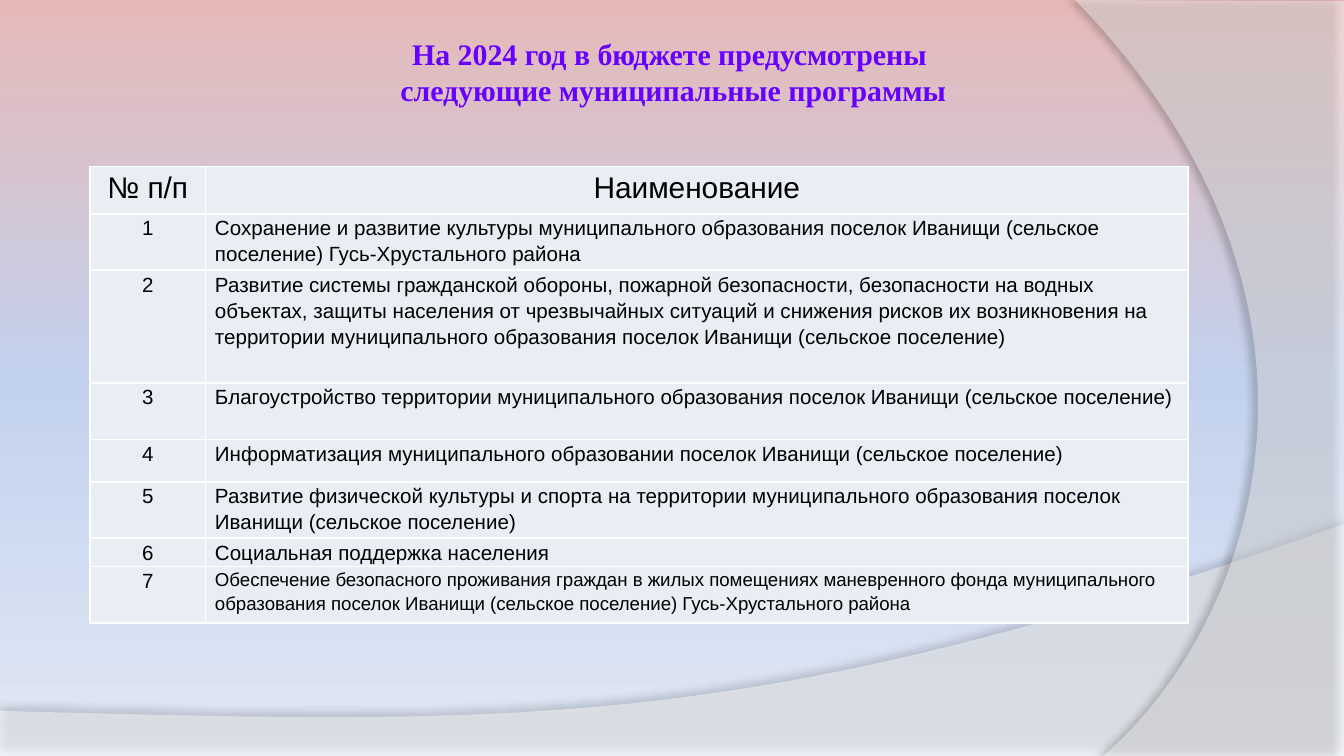
import copy

import lxml.etree
import pptx
import pptx.dml.color
import pptx.enum.text
import pptx.oxml.ns
import pptx.util

WIDTH = 10
HEIGHT = WIDTH * 9 / 16
ROW_UNIT = 0.21
COLUMN_WIDTHS = [0.86, 7.31]
HEADER = ("№ п/п", "Наименование")
# Name of the programme, row height in units, text size
PROGRAMMES = [
    ("Сохранение и развитие культуры муниципального образования поселок Иванищи "
     "(сельское поселение) Гусь-Хрустального района", 2, 11),
    ("Развитие системы гражданской обороны, пожарной безопасности, безопасности на водных "
     "объектах, защиты населения от чрезвычайных ситуаций и снижения рисков их возникновения "
     "на территории муниципального образования поселок Иванищи (сельское поселение)", 4, 11),
    ("Благоустройство территории муниципального образования поселок Иванищи "
     "(сельское поселение)", 2, 11),
    ("Информатизация муниципального образовании поселок Иванищи (сельское поселение)", 1.5, 11),
    ("Развитие физической культуры и спорта на территории муниципального образования поселок "
     "Иванищи (сельское поселение)", 2, 11),
    ("Социальная поддержка населения", 1, 11),
    ("Обеспечение безопасного проживания граждан в жилых помещениях маневренного фонда "
     "муниципального образования поселок Иванищи (сельское поселение) "
     "Гусь-Хрустального района", 2, 10),
]
# Corners before the curve, its two control points and end, opacity,
# then shadow opacity, distance and direction
WAVES = [
    ([(0, 5.29), (0, HEIGHT), (WIDTH, HEIGHT), (WIDTH, 3.9)],
     [(5.59, 5.47), (3.91, 5.39), (0, 5.29)], 45, (35, 3.5, 270)),
    ([(WIDTH, 0.01), (WIDTH, HEIGHT), (8.21, HEIGHT)],
     [(9.35, 4.64), (10.18, 2.25), (8, 0)], 40, (45, 4, 180)),
]
CURVE_STEPS = 60


def color(hex_string):
    return pptx.dml.color.RGBColor.from_string(hex_string)


def add_element(parent, tag, **attributes):
    element = lxml.etree.SubElement(parent, pptx.oxml.ns.qn(tag))
    for name, value in attributes.items():
        element.set(name, str(value))
    return element


presentation = pptx.Presentation()
presentation.slide_width = pptx.util.Inches(WIDTH)
presentation.slide_height = pptx.util.Inches(HEIGHT)
slide = presentation.slides.add_slide(presentation.slide_layouts[5])

# Background
background = slide.background.fill
background.gradient()
background.gradient_angle = 270
stop_list = slide.element.find(".//" + pptx.oxml.ns.qn("a:gsLst"))
stop_list.append(copy.deepcopy(stop_list[0]))
for stop, position, shade in zip(background.gradient_stops, (0, 0.5, 1),
                                 ("E6B9B8", "C2D1ED", "E1E8F5")):
    stop.position = position
    stop.color.rgb = color(shade)

# Waves, behind the title
title = slide.shapes.title
for corners, curve, opacity, (shadow_opacity, distance, direction) in WAVES:
    controls = [corners[-1], *curve]
    outline = list(corners)
    for step in range(1, CURVE_STEPS + 1):
        t = step / CURVE_STEPS
        weights = ((1 - t) ** 3, 3 * t * (1 - t) ** 2, 3 * t ** 2 * (1 - t), t ** 3)
        outline.append(tuple(sum(weight * point[axis] for weight, point in
                                 zip(weights, controls)) for axis in (0, 1)))
    # The builder keeps whole numbers only, so the outline is given in EMU
    outline = [(pptx.util.Inches(x), pptx.util.Inches(y)) for x, y in outline]
    builder = slide.shapes.build_freeform(*outline[0])
    builder.add_line_segments(outline[1:], close=True)
    wave = builder.convert_to_shape()
    wave.fill.solid()
    wave.fill.fore_color.rgb = color("FFFFFF")
    wave.line.fill.background()
    wave.shadow.inherit = False
    properties = wave.element.spPr
    fill_color = properties.find(".//" + pptx.oxml.ns.qn("a:srgbClr"))
    add_element(fill_color, "a:alpha", val=opacity * 1000)
    effects = properties.find(pptx.oxml.ns.qn("a:effectLst"))
    shadow = add_element(effects, "a:outerShdw", blurRad=pptx.util.Pt(4),
                         dist=pptx.util.Pt(distance), dir=direction * 60000,
                         algn="ctr", rotWithShape=0)
    shadow_color = add_element(shadow, "a:srgbClr", val="000000")
    add_element(shadow_color, "a:alpha", val=shadow_opacity * 1000)
    title.element.addprevious(wave.element)

# Title
title.left, title.top = pptx.util.Inches(0.51), pptx.util.Inches(0.21)
title.width, title.height = pptx.util.Inches(9), pptx.util.Inches(0.65)
frame = title.text_frame
frame.vertical_anchor = pptx.enum.text.MSO_ANCHOR.MIDDLE
frame.margin_left = frame.margin_right = pptx.util.Inches(0.05)
frame.margin_top = frame.margin_bottom = pptx.util.Inches(0.05)
paragraph = frame.paragraphs[0]
paragraph.alignment = pptx.enum.text.PP_ALIGN.CENTER
for index, line in enumerate(("На 2024 год в бюджете предусмотрены ",
                              "следующие муниципальные программы")):
    if index:
        paragraph.add_line_break()
    run = paragraph.add_run()
    run.text = line
    run.font.name = "Times New Roman"
    run.font.size = pptx.util.Pt(16)
    run.font.bold = True
    run.font.color.rgb = color("6600FF")

# Table: text and size of both cells, row by row
rows = [(0.35, [(text, 16) for text in HEADER])]
for number, (name, units, size) in enumerate(PROGRAMMES, start=1):
    rows.append((units * ROW_UNIT, [(str(number), 11), (name, size)]))

table = slide.shapes.add_table(
    len(rows), len(COLUMN_WIDTHS), pptx.util.Inches(0.67), pptx.util.Inches(1.24),
    pptx.util.Inches(sum(COLUMN_WIDTHS)),
    pptx.util.Inches(sum(height for height, _ in rows))).table
table.first_row = table.horz_banding = False
for column, width in zip(table.columns, COLUMN_WIDTHS):
    column.width = pptx.util.Inches(width)

for row_index, (height, contents) in enumerate(rows):
    table.rows[row_index].height = pptx.util.Inches(height)
    for column_index, (text, size) in enumerate(contents):
        cell = table.cell(row_index, column_index)
        cell.margin_left = cell.margin_right = pptx.util.Inches(0.07)
        cell.margin_top = cell.margin_bottom = 0
        cell_properties = cell._tc.get_or_add_tcPr()
        for side in ("a:lnL", "a:lnR", "a:lnT", "a:lnB"):
            border = add_element(cell_properties, side, w=pptx.util.Pt(1))
            add_element(add_element(border, "a:solidFill"), "a:srgbClr", val="FFFFFF")
        cell.fill.solid()
        cell.fill.fore_color.rgb = color("E9EDF4")
        paragraph = cell.text_frame.paragraphs[0]
        paragraph.line_spacing = 1.15
        centered = row_index == 0 or column_index == 0
        paragraph.alignment = (pptx.enum.text.PP_ALIGN.CENTER if centered
                               else pptx.enum.text.PP_ALIGN.LEFT)
        run = paragraph.add_run()
        run.text = text
        run.font.name = "Arial"
        run.font.size = pptx.util.Pt(size)
        run.font.color.rgb = color("000000")

presentation.save("out.pptx")
